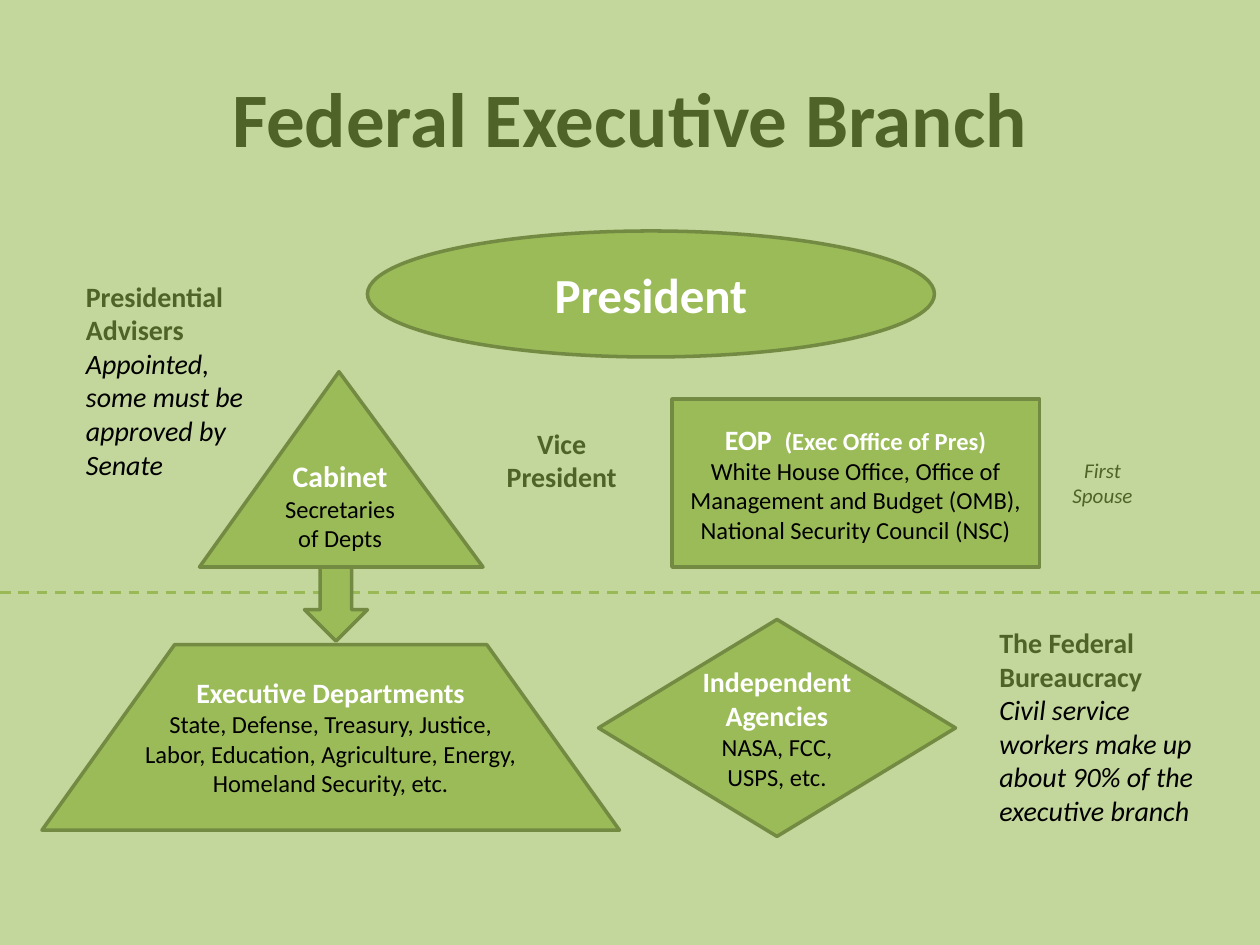
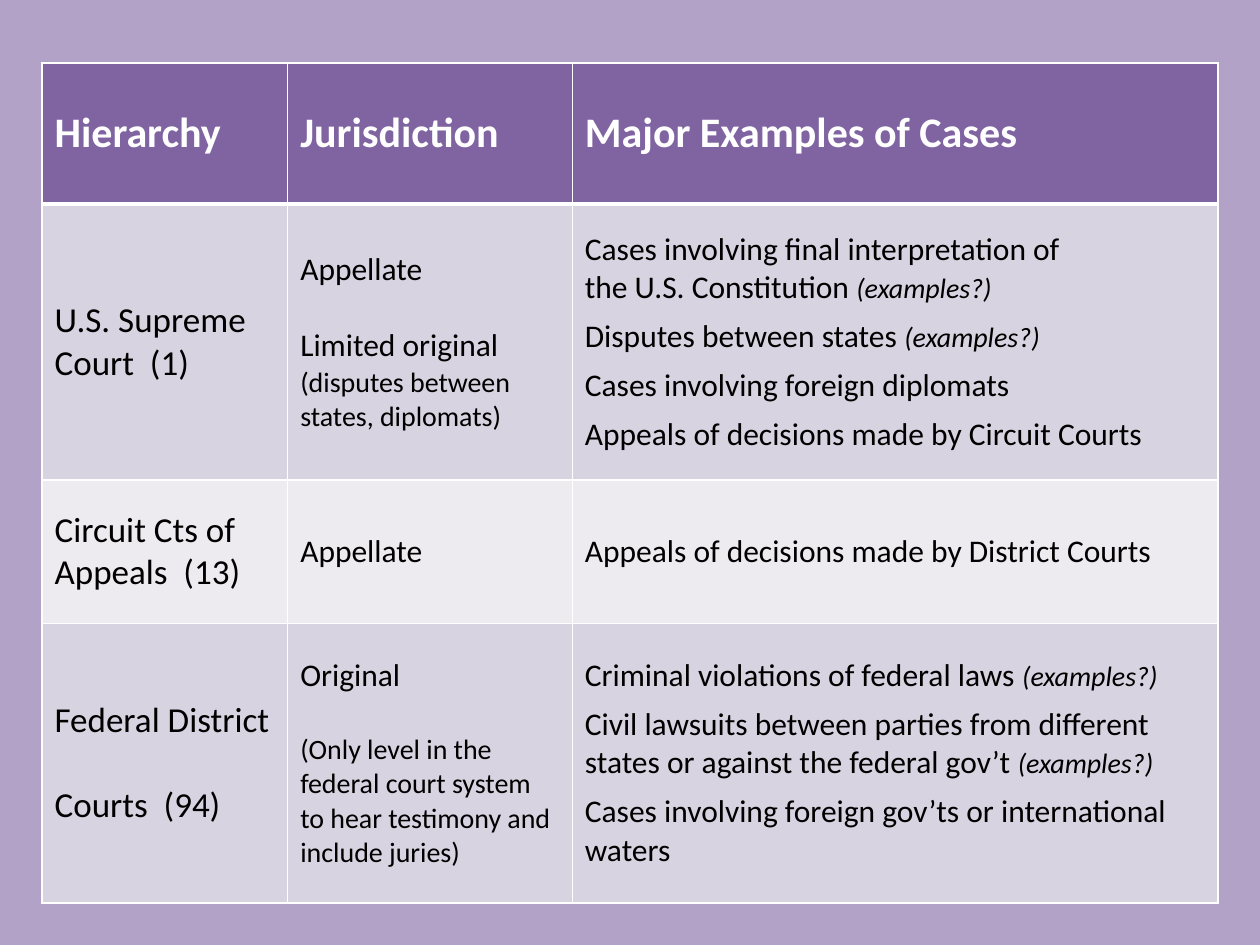
import copy

import pptx
import pptx.dml.color
import pptx.enum.dml
import pptx.enum.shapes
import pptx.enum.text
import pptx.oxml
import pptx.oxml.ns
import pptx.util

Pt = pptx.util.Pt
SHAPE = pptx.enum.shapes.MSO_SHAPE
ALIGN = pptx.enum.text.PP_ALIGN
ANCHOR = pptx.enum.text.MSO_ANCHOR

COLORS = {
    "green_page": "C3D69B",
    "green": "9BBB59",
    "green_outline": "738A42",
    "green_dash": "98B955",
    "green_text": "4F6228",
    "purple_page": "B3A2C7",
    "purple": "8064A2",
    "band_dark": "D8D3E0",
    "band_light": "EDEAF0",
    "white": "FFFFFF",
    "black": "000000",
}
FONT = "Calibri"
WIDTH, HEIGHT = 720, 540

LABEL = dict(size=16, color="green_text", bold=True)
REMARK = dict(size=16, italic=True)
SHAPE_HEAD = dict(size=16, color="white", bold=True, align=ALIGN.CENTER)
SHAPE_BODY = dict(size=14, align=ALIGN.CENTER)

COURT = dict(size=20)
BODY = dict(size=18)
SPACED = dict(size=18, after=22)
NOTE = dict(size=16)
CASE = dict(size=18, after=6)
EXAMPLES = ("(examples?)", dict(size=16, italic=True, same_line=True))

COLUMN_WIDTHS = [140.4, 162.6, 369]
ROW_HEIGHTS = [80.6, 157.6, 82, 159.8]
HEADERS = ["Hierarchy", "Jurisdiction", "Major Examples of Cases"]
COURTS = [
    [
        [("U.S. Supreme\nCourt  (1)", COURT)],
        [
            ("Appellate", SPACED),
            ("Limited original\n", BODY),
            ("(disputes between states, diplomats)", dict(NOTE, same_line=True)),
        ],
        [
            ("Cases involving final interpretation of\nthe U.S. Constitution ", CASE),
            EXAMPLES,
            ("Disputes between states ", CASE),
            EXAMPLES,
            ("Cases involving foreign diplomats", CASE),
            ("Appeals of decisions made by Circuit Courts", CASE),
        ],
    ],
    [
        [("Circuit Cts of Appeals  (13)", COURT)],
        [("Appellate", BODY)],
        [("Appeals of decisions made by District Courts", BODY)],
    ],
    [
        [("Federal District", dict(COURT, after=24.4)), ("Courts  (94)", COURT)],
        [
            ("Original", SPACED),
            ("(Only level in the federal court system to hear testimony"
             " and include juries)", NOTE),
        ],
        [
            ("Criminal violations of federal laws ", CASE),
            EXAMPLES,
            ("Civil lawsuits between parties from different states"
             " or against the federal gov’t ", CASE),
            EXAMPLES,
            ("Cases involving foreign gov’ts or international waters", CASE),
        ],
    ],
]


def rgb(name):
    return pptx.dml.color.RGBColor.from_string(COLORS[name])


def add_text(tf, text, *, size, color="black", bold=False, italic=False,
             align=None, after=None, same_line=False):
    """Add a paragraph, or continue the last one; newlines become line breaks."""
    p = tf.paragraphs[-1]
    if p.runs and not same_line:
        p = tf.add_paragraph()
    if align is not None:
        p.alignment = align
    if after is not None:
        p.space_after = Pt(after)
    for i, line in enumerate(text.split("\n")):
        if i:
            p.add_line_break()
            p._p[-1].append(copy.deepcopy(r._r.get_or_add_rPr()))
        if line:
            r = p.add_run()
            r.text = line
            r.font.name, r.font.size = FONT, Pt(size)
            r.font.bold, r.font.italic = bold, italic
            r.font.color.rgb = rgb(color)


def add_texts(tf, texts):
    for text, style in texts:
        add_text(tf, text, **style)


def add_slide(prs, background):
    s = prs.slides.add_slide(prs.slide_layouts[6])
    s.background.fill.solid()
    s.background.fill.fore_color.rgb = rgb(background)
    return s


def add_box(s, box, texts, anchor=ANCHOR.TOP):
    tf = s.shapes.add_textbox(*map(Pt, box)).text_frame
    tf.word_wrap = True
    tf.vertical_anchor = anchor
    add_texts(tf, texts)


def add_green_shape(s, kind, box, texts=(), adjust=None, room_below=0):
    sp = s.shapes.add_shape(kind, *map(Pt, box))
    sp.shadow.inherit = False
    sp.fill.solid()
    sp.fill.fore_color.rgb = rgb("green")
    sp.line.color.rgb = rgb("green_outline")
    sp.line.width = Pt(2)
    if adjust is not None:
        sp.adjustments[0] = adjust
    tf = sp.text_frame
    tf.word_wrap = True
    tf.vertical_anchor = ANCHOR.MIDDLE
    tf.margin_bottom = Pt(3.6 + room_below)
    add_texts(tf, texts)


def add_dashed_line(s, x, y, width):
    line = s.shapes.add_connector(pptx.enum.shapes.MSO_CONNECTOR.STRAIGHT,
                                  Pt(x), Pt(y), Pt(x + width), Pt(y))
    line.line.color.rgb = rgb("green_dash")
    line.line.width = Pt(1.5)
    line.line.dash_style = pptx.enum.dml.MSO_LINE.DASH
    line._element.spPr.append(pptx.oxml.parse_xml(
        "<a:effectLst %s/>" % pptx.oxml.ns.nsdecls("a")))


def add_bureaucracy(s, box):
    """Departments and agencies, below a dashed line along the box's top."""
    x, y, width, _ = box
    add_dashed_line(s, x, y, width)
    add_green_shape(s, SHAPE.DOWN_ARROW, (x + 174, y - 20, 36, 48))
    add_green_shape(s, SHAPE.TRAPEZOID, (x + 24, y + 30, 330, 106), [
        ("Executive Departments", SHAPE_HEAD),
        ("State, Defense, Treasury, Justice, Labor, Education, Agriculture,"
         " Energy, Homeland Security, etc.", SHAPE_BODY),
    ], adjust=0.715, room_below=17)
    add_green_shape(s, SHAPE.DIAMOND, (x + 342, y + 15.6, 204, 124), [
        ("Independent Agencies", SHAPE_HEAD),
        ("NASA, FCC, USPS, etc.", SHAPE_BODY),
    ])
    add_box(s, (x + 564, y + 15.6, 132, 124), [
        ("The Federal Bureaucracy", LABEL),
        ("Civil service workers make up about 90% of the executive branch", REMARK),
    ])


def add_president_and_advisers(s, box):
    x, y, _, _ = box
    add_green_shape(s, SHAPE.OVAL, (x + 210, y, 324, 72),
                    [("President", dict(SHAPE_HEAD, size=28))])
    add_box(s, (x + 42, y + 24, 126, 143), [
        ("Presidential Advisers", LABEL),
        ("Appointed,\nsome must be approved by Senate", REMARK),
    ])
    add_green_shape(s, SHAPE.ISOSCELES_TRIANGLE, (x + 114, y + 80.4, 162, 111.6), [
        ("Cabinet", dict(SHAPE_HEAD, size=17)),
        ("Secretaries of Depts", SHAPE_BODY),
    ], adjust=0.492, room_below=14.6)
    centered = dict(LABEL, align=ALIGN.CENTER)
    add_box(s, (x + 264, y + 108, 114, 46),
            [("Vice", centered), ("President", centered)])
    add_green_shape(s, SHAPE.RECTANGLE, (x + 384, y + 96, 210, 96), [
        ("EOP  ", SHAPE_HEAD),
        ("(Exec Office of Pres)", dict(SHAPE_HEAD, size=14, same_line=True)),
        ("White House Office, Office of Management and Budget (OMB),"
         " National Security Council (NSC)", SHAPE_BODY),
    ])
    add_box(s, (x + 600, y + 126, 60, 36), [
        ("First Spouse", dict(size=12, color="green_text", italic=True,
                              align=ALIGN.CENTER)),
    ])


def set_borders(cell, **widths):
    tcPr = cell._tc.get_or_add_tcPr()
    for i, side in enumerate("LRTB"):
        tcPr.insert(i, pptx.oxml.parse_xml(
            '<a:ln%s %s w="%d"><a:solidFill><a:srgbClr val="%s"/></a:solidFill></a:ln%s>'
            % (side, pptx.oxml.ns.nsdecls("a"), Pt(widths.get(side, 1)),
               COLORS["white"], side)))


def add_court_table(s, box):
    header = dict(size=24, color="white", bold=True)
    rows = [[[(title, header)] for title in HEADERS]] + COURTS
    fills = ["purple", "band_dark", "band_light", "band_dark"]
    table = s.shapes.add_table(len(rows), len(HEADERS), *map(Pt, box)).table
    for column, width in zip(table.columns, COLUMN_WIDTHS):
        column.width = Pt(width)
    for i, (row, height) in enumerate(zip(table.rows, ROW_HEIGHTS)):
        row.height = Pt(height)
        for cell, texts in zip(row.cells, rows[i]):
            cell.fill.solid()
            cell.fill.fore_color.rgb = rgb(fills[i])
            cell.vertical_anchor = ANCHOR.MIDDLE
            set_borders(cell, T=3 if i == 1 else 1, B=3 if i == 0 else 1)
            add_texts(cell.text_frame, texts)


def build_executive_slide(prs):
    s = add_slide(prs, "green_page")
    title = dict(size=44, color="green_text", bold=True, align=ALIGN.CENTER)
    add_box(s, (36, 21.6, 648, 90), [("Federal Executive Branch", title)],
            ANCHOR.MIDDLE)
    add_bureaucracy(s, (0, 338.4, WIDTH, 201.6))
    add_president_and_advisers(s, (0, 132, WIDTH, 206.4))


def build_courts_slide(prs):
    s = add_slide(prs, "purple_page")
    add_court_table(s, (24, 36, sum(COLUMN_WIDTHS), sum(ROW_HEIGHTS)))


def main():
    prs = pptx.Presentation()
    prs.slide_width, prs.slide_height = Pt(WIDTH), Pt(HEIGHT)
    build_executive_slide(prs)
    build_courts_slide(prs)
    prs.save("out.pptx")


if __name__ == "__main__":
    main()
